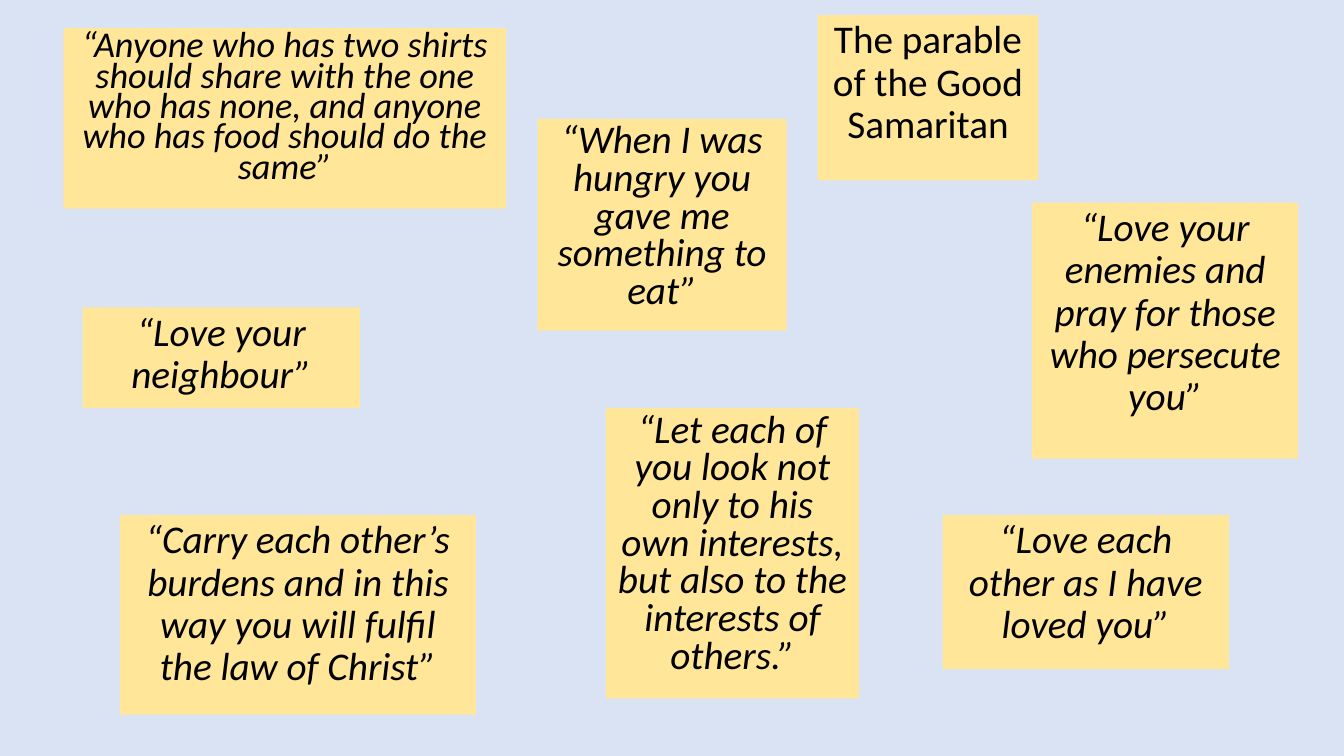
from pptx import Presentation
from pptx.dml.color import RGBColor
from pptx.enum.shapes import MSO_SHAPE
from pptx.enum.text import MSO_ANCHOR, PP_ALIGN
from pptx.util import Inches, Pt

RECTANGLE = MSO_SHAPE.RECTANGLE
TOP = MSO_ANCHOR.TOP
CENTER = PP_ALIGN.CENTER

PALE_BLUE = RGBColor(0xDA, 0xE3, 0xF3)
NOTE_YELLOW = RGBColor(0xFF, 0xE6, 0x99)
BLACK = RGBColor(0, 0, 0)

SLIDE_WIDTH = Inches(13.333)
SLIDE_HEIGHT = Inches(7.5)

# Each place is left, top, width, height in percent of the slide.
TEACHINGS = [
    ((6.15, 40.67, 20.63, 13.33), "“Love your neighbour”", {}),
    ((76.8, 26.8, 19.8, 33.87),
     "“Love your enemies and pray for those who persecute you”", {}),
    ((40, 15.73, 18.53, 28),
     "“When I was hungry you gave me something to eat”", {"spacing": 0.8}),
    ((60.83, 2, 16.43, 21.87),
     "The parable of the Good Samaritan", {"italic": False}),
    ((8.93, 68.13, 26.48, 26.4),
     "“Carry each other’s burdens and in this way you will fulfil the law of Christ”",
     {}),
    ((70.13, 68.13, 21.3, 20.4), "“Love each other as I have loved you”", {}),
    ((4.73, 3.73, 32.93, 23.87),
     "“Anyone who has two shirts should share with the one who has none, "
     "and anyone who has food should do the same”",
     {"size": 25.9, "spacing": 0.7}),
    ((45.08, 54, 18.83, 38.4),
     "“Let each of you look not only to his own interests, "
     "but also to the interests of others.”", {"spacing": 0.8}),
]


def across(percent):
    return round(SLIDE_WIDTH * percent / 100)


def down(percent):
    return round(SLIDE_HEIGHT * percent / 100)


def write_text(frame, text, *, size=28, spacing=0.9, italic=True):
    frame.word_wrap = True
    frame.vertical_anchor = TOP
    paragraph = frame.paragraphs[0]
    paragraph.alignment = CENTER
    paragraph.line_spacing = spacing
    paragraph.space_before = Pt(10)
    run = paragraph.add_run()
    run.text = text
    run.font.name = "Calibri"
    run.font.size = Pt(size)
    run.font.italic = italic
    run.font.color.rgb = BLACK


def add_note(slide, place, text, **text_format):
    left, top, width, height = place
    note = slide.shapes.add_shape(
        RECTANGLE, across(left), down(top), across(width), down(height))
    note.shadow.inherit = False
    note.fill.solid()
    note.fill.fore_color.rgb = NOTE_YELLOW
    note.line.fill.background()
    write_text(note.text_frame, text, **text_format)


def main():
    deck = Presentation()
    deck.slide_width = SLIDE_WIDTH
    deck.slide_height = SLIDE_HEIGHT
    slide = deck.slides.add_slide(deck.slide_layouts[6])
    slide.background.fill.solid()
    slide.background.fill.fore_color.rgb = PALE_BLUE
    for place, text, text_format in TEACHINGS:
        add_note(slide, place, text, **text_format)
    deck.save("out.pptx")


if __name__ == "__main__":
    main()
